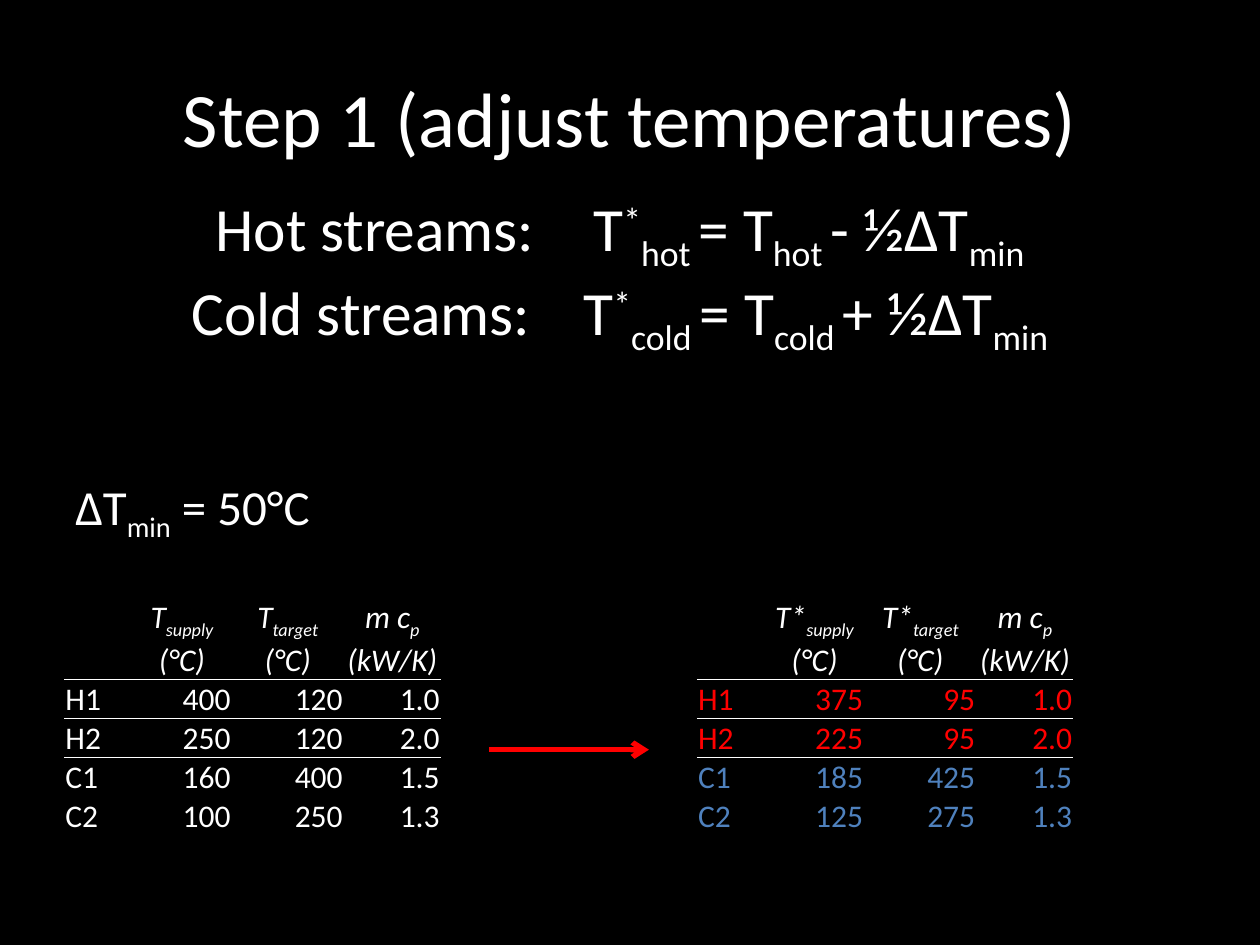
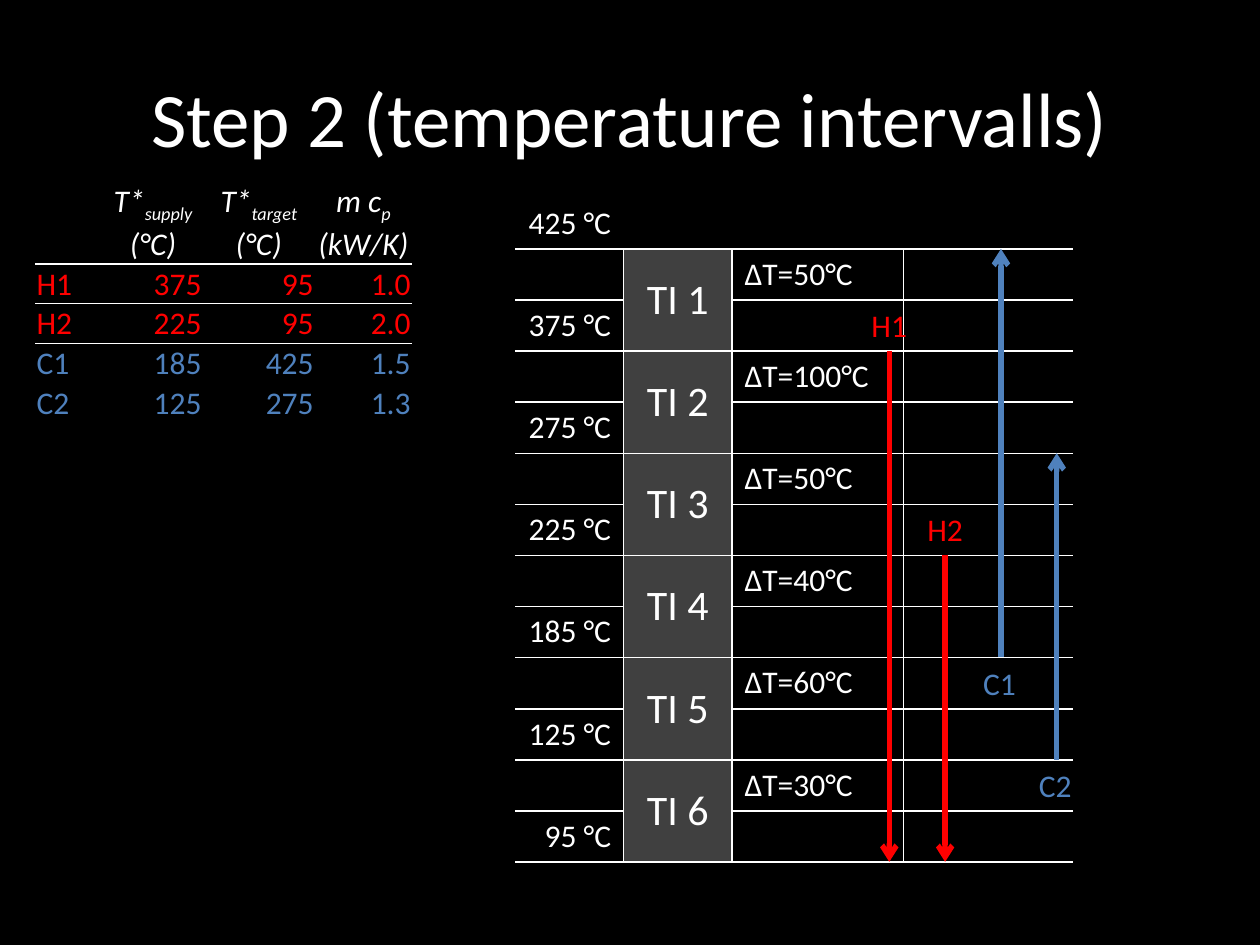
from dataclasses import dataclass

import pptx
import pptx.dml.color
import pptx.enum.shapes
import pptx.enum.text
import pptx.oxml.ns
import pptx.util
from lxml import etree

ALIGN = pptx.enum.text.PP_ALIGN
ANCHOR = pptx.enum.text.MSO_ANCHOR
NO_TABLE_STYLE = "{2D5ABB26-0587-4C30-8999-92F81FD0307C}"
SUB, SUPER = -25, 30
DELTA_T_MIN = 50
STREAMS = [("H1", 400, 120, "1.0"), ("H2", 250, 120, "2.0"),
           ("C1", 160, 400, "1.5"), ("C2", 100, 250, "1.3")]


@dataclass(frozen=True)
class Theme:
    """Colours, font and type sizes shared by the slides."""
    font: str = "Calibri"
    ground: str = "000000"
    ink: str = "FFFFFF"
    hot: str = "FF0000"
    cold: str = "4F81BD"
    panel: str = "404040"
    title: float = 44
    formula: float = 35.1
    note: float = 28
    interval: float = 24
    body: float = 18


@dataclass(frozen=True)
class Box:
    """A rectangle in inches."""
    left: float
    top: float
    width: float
    height: float

    def lengths(self):
        """Return the four sides as slide lengths."""
        return [pptx.util.Inches(side) for side in (self.left, self.top, self.width, self.height)]


THEME = Theme()
STREAM_COLUMNS, STREAM_ROWS = [0.54, 0.79, 0.89, 0.77], [0.57] + [0.28] * 4
INTERVAL_COLUMNS = [0.86, 0.86, 0.86, 0.5, 1.35]


def rgb(colour):
    """Turn a hex string into a colour."""
    return pptx.dml.color.RGBColor.from_string(colour)


def stream_colour(name):
    """Return the colour of a hot or cold stream."""
    return THEME.hot if name.startswith("H") else THEME.cold


def adjusted_streams():
    """Shift hot streams down and cold streams up by half the minimum difference."""
    half = DELTA_T_MIN // 2
    shifts = {"H": -half, "C": half}
    return [(name, supply + shifts[name[0]], target + shifts[name[0]], capacity)
            for name, supply, target, capacity in STREAMS]


def write(para, spans, size, colour=THEME.ink, align=ALIGN.LEFT, italic=False):
    """Add runs given as (text, baseline percent) pairs to a paragraph."""
    para.alignment = align
    for text, baseline in spans:
        span = para.add_run()
        span.text = text
        span.font.name, span.font.size = THEME.font, pptx.util.Pt(size)
        span.font.italic = italic
        span.font.color.rgb = rgb(colour)
        if baseline:
            span.font._element.set("baseline", str(baseline * 1000))


def add_text(page, box, spans, size, colour=THEME.ink):
    """Add a one-line text box that does not wrap."""
    frame = page.shapes.add_textbox(*box.lengths()).text_frame
    frame.word_wrap = False
    write(frame.paragraphs[0], spans, size, colour)


def add_arrow(page, start, end, colour):
    """Draw a thick open-headed arrow between two points."""
    points = [pptx.util.Inches(value) for value in (*start, *end)]
    arrow = page.shapes.add_connector(pptx.enum.shapes.MSO_CONNECTOR.STRAIGHT, *points)
    arrow.line.color.rgb = rgb(colour)
    arrow.line.width = pptx.util.Pt(3)
    qn = pptx.oxml.ns.qn
    etree.SubElement(arrow.line._get_or_add_ln(), qn("a:tailEnd"), type="arrow")
    etree.SubElement(arrow._element.spPr, qn("a:effectLst"))


def add_plain_table(page, box, columns, rows):
    """Add a table without style, banding or fill."""
    table = page.shapes.add_table(len(rows), len(columns), *box.lengths()).table
    table.first_row = table.horz_banding = False
    table._tbl.tblPr.find(pptx.oxml.ns.qn("a:tableStyleId")).text = NO_TABLE_STYLE
    for column, width in zip(table.columns, columns):
        column.width = pptx.util.Inches(width)
    for row, height in zip(table.rows, rows):
        row.height = pptx.util.Inches(height)
    return table


def finish_cell(cell, sides="", fill=None):
    """Rule the given sides (a subset of LRTB, in that order) and fill a cell."""
    qn = pptx.oxml.ns.qn
    for side in sides:
        line = etree.SubElement(cell._tc.get_or_add_tcPr(), qn(f"a:ln{side}"), w="12700")
        solid = etree.SubElement(line, qn("a:solidFill"))
        etree.SubElement(solid, qn("a:srgbClr"), val=THEME.ink)
    if fill:
        cell.fill.solid()
        cell.fill.fore_color.rgb = rgb(fill)
    else:
        cell.fill.background()


def add_stream_table(page, left, top, streams, mark="", coloured=False):
    """Draw the stream data with the symbols in the heading marked as given."""
    box = Box(left, top, sum(STREAM_COLUMNS), sum(STREAM_ROWS))
    table = add_plain_table(page, box, STREAM_COLUMNS, STREAM_ROWS)
    headings = [("T" + mark, "supply", " (°C)"), ("T" + mark, "target", " (°C)"),
                ("m c", "p", " (kW/K)")]
    for column, (symbol, index, unit) in enumerate(headings, 1):
        cell = table.cell(0, column)
        cell.vertical_anchor = ANCHOR.MIDDLE
        write(cell.text_frame.paragraphs[0], [(symbol, 0), (index, SUB), (unit, 0)],
              THEME.body, align=ALIGN.CENTER, italic=True)
    for row, stream in enumerate(streams, 1):
        colour = stream_colour(stream[0]) if coloured else THEME.ink
        for column, value in enumerate(stream):
            cell = table.cell(row, column)
            cell.vertical_anchor = ANCHOR.BOTTOM
            write(cell.text_frame.paragraphs[0], [(str(value), 0)], THEME.body, colour,
                  ALIGN.RIGHT if column else ALIGN.LEFT)
    for row in range(len(STREAM_ROWS)):
        for column in range(len(STREAM_COLUMNS)):
            cell = table.cell(row, column)
            if row or column:
                cell.margin_left = cell.margin_right = cell.margin_top = pptx.util.Inches(0.01)
                cell.margin_bottom = 0
            finish_cell(cell, {0: "B", 1: "TB", 2: "T"}.get(row, ""))


def add_interval_table(page, box, levels):
    """Draw two rows for each interval between neighbouring temperature levels."""
    count = 2 * len(levels) - 1
    table = add_plain_table(page, box, INTERVAL_COLUMNS, [box.height / count] * count)
    for row in range(count):
        opens = row % 2 == 1
        edge = "T" if opens else "B"
        for column in range(len(INTERVAL_COLUMNS)):
            side = {0: "R", 2: "L"}.get(column, "") if row else ""
            panel = column == 1 and row > 0
            finish_cell(table.cell(row, column), "LRTB" if panel else side + edge,
                        THEME.panel if panel else None)
        table.cell(row, 2).merge(table.cell(row, 3))
        if opens:
            table.cell(row, 1).merge(table.cell(row + 1, 1))
    for index, level in enumerate(levels):
        write(table.cell(2 * index, 0).text_frame.paragraphs[0], [(f"{level} °C", 0)],
              THEME.body, align=ALIGN.RIGHT)
    for index, (upper, lower) in enumerate(zip(levels, levels[1:]), 1):
        panel = table.cell(2 * index - 1, 1)
        panel.vertical_anchor = ANCHOR.MIDDLE
        write(panel.text_frame.paragraphs[0], [(f"TI {index}", 0)], THEME.interval,
              align=ALIGN.CENTER)
        write(table.cell(2 * index - 1, 2).text_frame.paragraphs[0],
              [(f"∆T={upper - lower}°C", 0)], THEME.body)


def add_stream_arrows(page, box, levels, streams):
    """Draw each stream from its supply level to its target level, labelled at its start."""
    row = box.height / (2 * len(levels) - 1)
    heights = {level: box.top + row * (2 * index + 1) for index, level in enumerate(levels)}
    shares = {"H1": 0.67, "H2": 0.77, "C1": 0.87, "C2": 0.97}
    for name, supply, target, _ in streams:
        x, start = box.left + shares[name] * box.width, heights[supply]
        add_arrow(page, (x, start), (x, heights[target]), stream_colour(name))
        top = start - row if name.startswith("H") else start
        add_text(page, Box(x - 0.24, top, 0.48, 0.4), [(name, 0)], THEME.body,
                 stream_colour(name))


def add_formulas(page, box):
    """Write the shift rules for hot and cold streams."""
    frame = page.shapes.add_textbox(*box.lengths()).text_frame
    frame.word_wrap = True
    frame.vertical_anchor = ANCHOR.MIDDLE
    frame.margin_top, frame.margin_bottom = 0, pptx.util.Inches(0.6)
    rules = [("Hot streams: \tT", "hot ", "-"), ("Cold streams:\t T", "cold ", "+")]
    for index, (lead, kind, sign) in enumerate(rules):
        para = frame.add_paragraph() if index else frame.paragraphs[0]
        write(para, [(lead, 0), ("*", SUPER), (kind, SUB), ("= T", 0), (kind, SUB),
                     (f"{sign} ½∆T", 0), ("min", SUB)], THEME.formula, align=ALIGN.CENTER)


def add_page(deck, title):
    """Add a title-only slide with its formatted heading."""
    page = deck.slides.add_slide(deck.slide_layouts.get_by_name("Title Only"))
    heading = page.shapes.title
    heading.left, heading.top, heading.width, heading.height = Box(0.5, 0.3, 9, 1.25).lengths()
    heading.text_frame.vertical_anchor = ANCHOR.MIDDLE
    write(heading.text_frame.paragraphs[0], [(title, 0)], THEME.title, align=ALIGN.CENTER)
    return page


def build_adjustment(deck):
    """Build the slide that shifts the stream temperatures."""
    page = add_page(deck, "Step 1 (adjust temperatures)")
    add_formulas(page, Box(0.42, 1.57, 9, 1.81))
    add_text(page, Box(0.5, 3.73, 2.14, 0.57),
             [("∆T", 0), ("min", SUB), (f" = {DELTA_T_MIN}°C", 0)], THEME.note)
    add_stream_table(page, 0.51, 4.74, STREAMS)
    add_stream_table(page, 5.53, 4.74, adjusted_streams(), "*", coloured=True)
    add_arrow(page, (3.88, 5.95), (5.15, 5.95), THEME.hot)


def build_intervals(deck):
    """Build the slide that sorts the streams into temperature intervals."""
    page = add_page(deck, "Step 2 (temperature intervalls)")
    streams = adjusted_streams()
    levels = sorted({level for stream in streams for level in stream[1:3]}, reverse=True)
    box = Box(4.09, 1.57, sum(INTERVAL_COLUMNS), 5.27)
    add_stream_table(page, 0.28, 1.44, streams, "*", coloured=True)
    add_interval_table(page, box, levels)
    add_stream_arrows(page, box, levels, streams)


def main():
    """Build and save the deck."""
    deck = pptx.Presentation()
    deck.slide_width, deck.slide_height = pptx.util.Inches(10), pptx.util.Inches(7.5)
    ground = deck.slide_master.background.fill
    ground.solid()
    ground.fore_color.rgb = rgb(THEME.ground)
    build_adjustment(deck)
    build_intervals(deck)
    deck.save("out.pptx")


if __name__ == "__main__":
    main()
